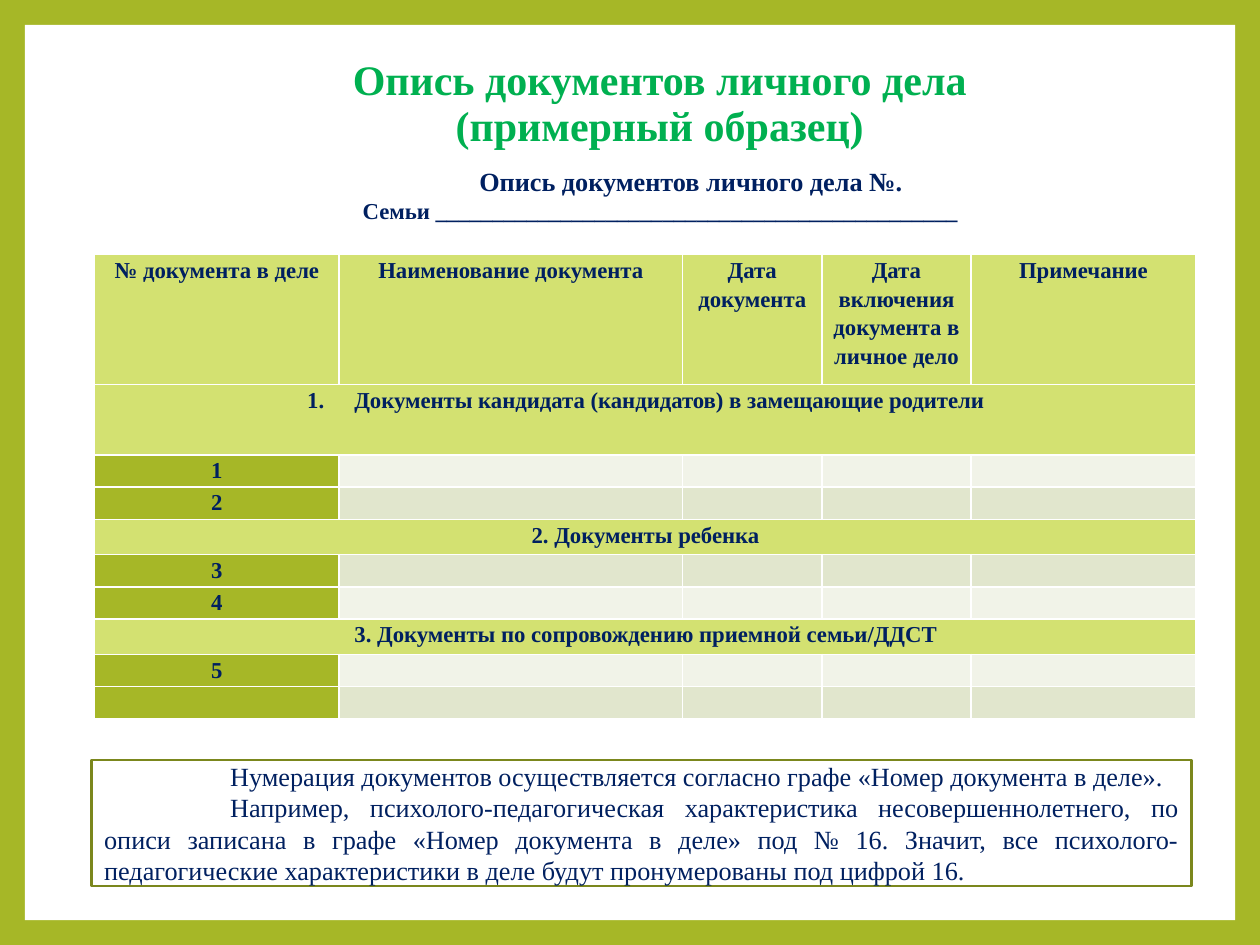
from dataclasses import dataclass

from lxml import etree
from pptx import Presentation
from pptx.dml.color import RGBColor
from pptx.enum.shapes import MSO_SHAPE
from pptx.enum.text import MSO_ANCHOR, MSO_AUTO_SIZE, PP_ALIGN
from pptx.oxml.ns import qn
from pptx.util import Cm, Pt

CENTER, JUSTIFY = PP_ALIGN.CENTER, PP_ALIGN.JUSTIFY
TOP, MIDDLE = MSO_ANCHOR.TOP, MSO_ANCHOR.MIDDLE
RECTANGLE = MSO_SHAPE.RECTANGLE
NO_AUTOFIT = MSO_AUTO_SIZE.NONE

FONT = "Times New Roman"
COLORS = {
    "olive": "A6B727",
    "outline": "7B871D",
    "lime": "D3E171",
    "light": "F1F3E8",
    "dark": "E1E6CD",
    "white": "FFFFFF",
    "green": "00B050",
    "navy": "002060",
}


@dataclass
class Style:
    size: float
    color: str = "navy"
    bold: bool = True
    align: PP_ALIGN = CENTER
    line_spacing: float = 1.0


@dataclass
class Section:
    title: str
    height: float
    numbers: list[str]
    numbered: bool = False


TITLE = Style(24, color="green", line_spacing=0.9)
SUBTITLE = Style(15)
FAMILY = Style(13)
CELL = Style(13, line_spacing=1.15)
NOTE = Style(15, bold=False, align=JUSTIFY)

HEADERS = ["№ документа в деле", "Наименование документа", "Дата документа",
           "Дата включения документа в личное дело", "Примечание"]
COLUMN_WIDTHS = [4.92, 6.93, 2.81, 3.0, 4.54]
HEADER_HEIGHT, ROW_HEIGHT, SECTION_HEIGHT = 2.62, 0.65, 0.71
SECTIONS = [
    Section("Документы кандидата (кандидатов) в замещающие родители", 1.42,
            ["1", "2"], numbered=True),
    Section("2. Документы ребенка", SECTION_HEIGHT, ["3", "4"]),
    Section("3. Документы по сопровождению приемной семьи/ДДСТ", SECTION_HEIGHT,
            ["5", ""]),
]
NOTES = [
    "Нумерация документов осуществляется согласно графе «Номер документа в деле».",
    "Например, психолого-педагогическая характеристика несовершеннолетнего, по описи "
    "записана в графе «Номер документа в деле» под № 16. Значит, все "
    "психолого-педагогические характеристики в деле будут пронумерованы под цифрой 16.",
]


def rgb(name: str) -> RGBColor:
    return RGBColor.from_string(COLORS[name])


def write(paragraph, text: str, style: Style) -> None:
    paragraph.text = text
    paragraph.alignment = style.align
    paragraph.line_spacing = style.line_spacing
    paragraph.space_before = Pt(0)
    paragraph.font.name = FONT
    paragraph.font.size = Pt(style.size)
    paragraph.font.bold = style.bold
    paragraph.font.color.rgb = rgb(style.color)


def indent(paragraph, first_line: float, left: float = 0) -> None:
    properties = paragraph._p.get_or_add_pPr()
    properties.set("marL", str(Cm(left)))
    properties.set("indent", str(Cm(first_line)))


def number(paragraph) -> None:
    indent(paragraph, -0.95, left=0.95)
    bullet = etree.Element(qn("a:buAutoNum"), type="arabicPeriod")
    paragraph._p.pPr.find(qn("a:defRPr")).addprevious(bullet)


def fill_cell(cell, color: str, text: str = "") -> None:
    cell.fill.solid()
    cell.fill.fore_color.rgb = rgb(color)
    cell.margin_left = cell.margin_right = Cm(0.18)
    cell.margin_top = cell.margin_bottom = 0
    paragraph = cell.text_frame.paragraphs[0]
    write(paragraph, text, CELL)
    if not text:  # keeps an empty row as low as a filled one
        etree.SubElement(paragraph._p, qn("a:endParaRPr"), sz=str(CELL.size * 100))


def add_rectangle(slide, left: float, top: float, width: float, height: float):
    shape = slide.shapes.add_shape(RECTANGLE, Cm(left), Cm(top), Cm(width), Cm(height))
    shape.shadow.inherit = False
    return shape


def add_frame(slide) -> None:
    slide.background.fill.solid()
    slide.background.fill.fore_color.rgb = rgb("olive")
    panel = add_rectangle(slide, 0.5, 0.5, 24.4, 18.05)
    panel.fill.solid()
    panel.fill.fore_color.rgb = rgb("white")
    panel.line.fill.background()
    panel.element.getparent().insert(2, panel.element)  # behind the title


def add_headings(slide) -> None:
    title = slide.shapes.title
    title.left, title.top, title.width, title.height = Cm(3.5), Cm(1.07), Cm(19.6), Cm(2.87)
    frame = title.text_frame
    frame.auto_size = NO_AUTOFIT
    frame.vertical_anchor = TOP
    write(frame.paragraphs[0], "Опись документов личного дела", TITLE)
    write(frame.add_paragraph(), "(примерный образец)", TITLE)

    box = slide.shapes.add_textbox(Cm(6.98), Cm(3.2), Cm(12.65), Cm(1.45))
    frame = box.text_frame
    frame.word_wrap = False
    frame.vertical_anchor = MIDDLE
    write(frame.paragraphs[0], "Опись документов личного дела №.", SUBTITLE)
    indent(frame.paragraphs[0], 1.25)
    write(frame.add_paragraph(), "Семьи " + "_" * 46, FAMILY)


def add_inventory(slide) -> None:
    heights = [HEADER_HEIGHT]
    for section in SECTIONS:
        heights += [section.height] + [ROW_HEIGHT] * len(section.numbers)
    table = slide.shapes.add_table(
        len(heights), len(HEADERS), Cm(1.91), Cm(5.13),
        Cm(sum(COLUMN_WIDTHS)), Cm(sum(heights))).table
    for column, width in zip(table.columns, COLUMN_WIDTHS):
        column.width = Cm(width)
    for row, height in zip(table.rows, heights):
        row.height = Cm(height)

    for column, header in enumerate(HEADERS):
        fill_cell(table.cell(0, column), "lime", header)
    last = len(HEADERS) - 1
    row = 1
    for section in SECTIONS:
        heading = table.cell(row, 0)
        heading.merge(table.cell(row, last))
        fill_cell(heading, "lime", section.title)
        if section.numbered:
            number(heading.text_frame.paragraphs[0])
        for row, text in enumerate(section.numbers, row + 1):
            fill_cell(table.cell(row, 0), "olive", text)
            for column in range(1, last + 1):
                fill_cell(table.cell(row, column), "dark" if row % 2 else "light")
        row += 1


def add_note(slide) -> None:
    box = add_rectangle(slide, 1.85, 15.32, 22.17, 2.54)
    box.fill.background()
    box.line.color.rgb = rgb("outline")
    box.line.width = Pt(1.5)
    frame = box.text_frame
    frame.word_wrap = True
    frame.vertical_anchor = MIDDLE
    for index, text in enumerate(NOTES):
        paragraph = frame.add_paragraph() if index else frame.paragraphs[0]
        write(paragraph, text, NOTE)
        indent(paragraph, 2.54)


def main() -> None:
    presentation = Presentation()
    presentation.slide_width, presentation.slide_height = Cm(25.4), Cm(19.05)
    slide = presentation.slides.add_slide(presentation.slide_layouts[5])
    add_frame(slide)
    add_headings(slide)
    add_inventory(slide)
    add_note(slide)
    presentation.save("out.pptx")


if __name__ == "__main__":
    main()
